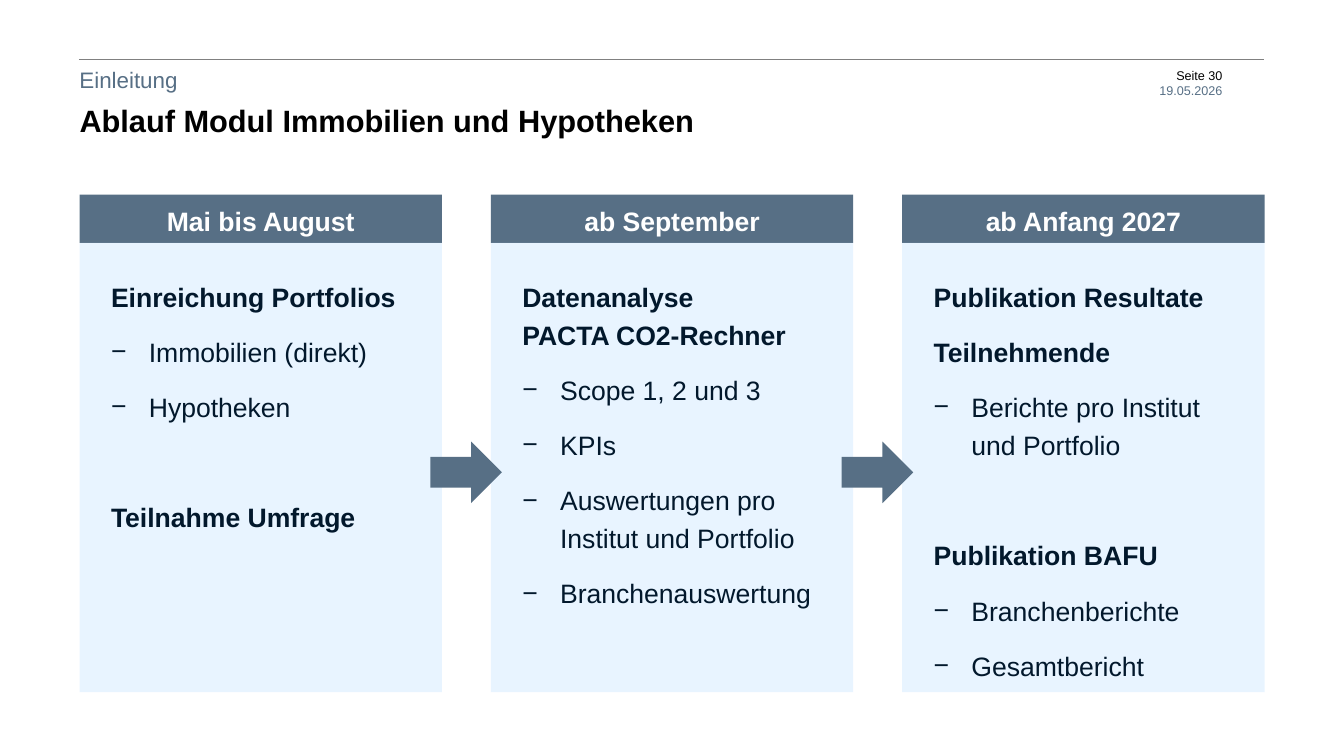
from lxml.etree import SubElement as Sub
from pptx import Presentation
from pptx.dml.color import RGBColor as RGB
from pptx.enum.shapes import MSO_CONNECTOR as Conn, MSO_SHAPE as Kind
from pptx.enum.text import MSO_ANCHOR as Anchor, MSO_AUTO_SIZE as Auto, PP_ALIGN as Align
from pptx.oxml.ns import qn
from pptx.util import Pt

THEME = {
    "slate": RGB(0x57, 0x6F, 0x85), "pale": RGB(0xD2, 0xEB, 0xFF),
    "navy": RGB(0x02, 0x18, 0x2C), "black": RGB(0, 0, 0),
    "white": RGB(255, 255, 255), "gray": RGB(0x80, 0x80, 0x80),
    "font": "Arial", "small": Pt(9), "label": Pt(16), "text": Pt(19), "title": Pt(22),
}


def write(par, text, size, tint, bold=False, **form):
    """Fill one paragraph and format it."""
    par.text = text
    for key, val in form.items():
        setattr(par, key, val)
    look = {"name": THEME["font"], "size": THEME[size], "bold": bold}
    for run in par.runs:
        for key, val in look.items():
            setattr(run.font, key, val)
        run.font.color.rgb = THEME[tint]


def frame(shape, side=0, top=0, anchor=Anchor.TOP):
    """Set up the text frame of a shape and return it."""
    body = shape.text_frame
    look = {"word_wrap": True, "auto_size": Auto.NONE, "vertical_anchor": anchor,
            "margin_left": Pt(side), "margin_right": Pt(side),
            "margin_top": Pt(top), "margin_bottom": Pt(side)}
    for key, val in look.items():
        setattr(body, key, val)
    return body


deck = Presentation()
deck.slide_width, deck.slide_height = Pt(960), Pt(540)
slide = deck.slides.add_slide(deck.slide_layouts[5])
shapes = slide.shapes
left, wide, pitch = 56.8, 258.9, 293.8

# Rule at the top
rule = shapes.add_connector(Conn.STRAIGHT, Pt(56.4), Pt(42.4), Pt(903), Pt(42.4))
rule.line.width = Pt(0.25)
rule.line.color.rgb = THEME["gray"]
Sub(rule.element.spPr, qn("a:effectLst"))

# Page number and date
page = frame(shapes.add_textbox(Pt(756), Pt(48.2), Pt(117.2), Pt(21.6)))
write(page.paragraphs[0], "Seite 30", "small", "black", alignment=Align.RIGHT)
write(page.add_paragraph(), "19.05.2026", "small", "slate", alignment=Align.RIGHT)

# Section label and title
label = frame(shapes.add_textbox(Pt(left), Pt(45.4), Pt(744.5), Pt(22.3)), anchor=Anchor.MIDDLE)
write(label.paragraphs[0], "Einleitung", "label", "slate")
title = shapes.title
place = {"left": left, "top": 70.6, "width": 744.5, "height": 22.3}
for key, val in place.items():
    setattr(title, key, Pt(val))
write(frame(title, top=1.7).paragraphs[0], "Ablauf Modul Immobilien und Hypotheken",
      "title", "black", True, alignment=Align.LEFT, line_spacing=1.0)

# Phases: heading, then blocks of bold heads and dashed points
phases = [
    ("Mai bis August", [
        (["Einreichung Portfolios"], ["Immobilien (direkt)", "Hypotheken"]),
        (["Teilnahme Umfrage"], [])]),
    ("ab September", [
        (["Datenanalyse\vPACTA CO2-Rechner"],
         ["Scope 1, 2 und 3", "KPIs", "Auswertungen pro Institut und Portfolio",
          "Branchenauswertung"])]),
    ("ab Anfang 2027", [
        (["Publikation Resultate", "Teilnehmende"], ["Berichte pro Institut und Portfolio"]),
        (["Publikation BAFU"], ["Branchenberichte", "Gesamtbericht"])]),
]
for col, (head, blocks) in enumerate(phases):
    x = Pt(left + col * pitch)
    bar = shapes.add_shape(Kind.RECTANGLE, x, Pt(139), Pt(wide), Pt(34.5))
    panel = shapes.add_shape(Kind.RECTANGLE, x, Pt(173.5), Pt(wide), Pt(321))
    for box, tint in ((bar, "slate"), (panel, "pale")):
        box.shadow.inherit = False
        box.fill.solid()
        box.fill.fore_color.rgb = THEME[tint]
        box.line.fill.background()
    tone = panel.element.spPr.find(qn("a:solidFill"))[0]
    Sub(tone, qn("a:alpha"), val="50000")
    write(frame(bar, 2.9, 7.5).paragraphs[0], head, "text", "white", True,
          alignment=Align.CENTER)

    body = frame(panel, 22.5, 22.3)
    par = body.paragraphs[0]
    for part, (heads, points) in enumerate(blocks):
        for row, text in enumerate(heads + points):
            first = part == row == 0
            if not first:
                par = body.add_paragraph()
            gap = 0 if first else 45.6 if row == 0 else 6
            bold = row < len(heads)
            if not bold:
                props = par._p.get_or_add_pPr()
                props.set("marL", str(Pt(27)))
                props.set("indent", str(-Pt(27)))
                Sub(props, qn("a:buFont"), typeface=THEME["font"])
                Sub(props, qn("a:buChar"), char="−")
            write(par, text, "text", "navy", bold, alignment=Align.LEFT,
                  line_spacing=1.2, space_before=Pt(gap), space_after=Pt(6))

# Arrows between the phases
for step in range(len(phases) - 1):
    arrow = shapes.add_shape(Kind.RIGHT_ARROW, Pt(307.4 + step * pitch), Pt(315.4),
                             Pt(51.1), Pt(43.9))
    arrow.shadow.inherit = False
    arrow.fill.solid()
    arrow.fill.fore_color.rgb = THEME["slate"]
    arrow.line.fill.background()

deck.save("out.pptx")
